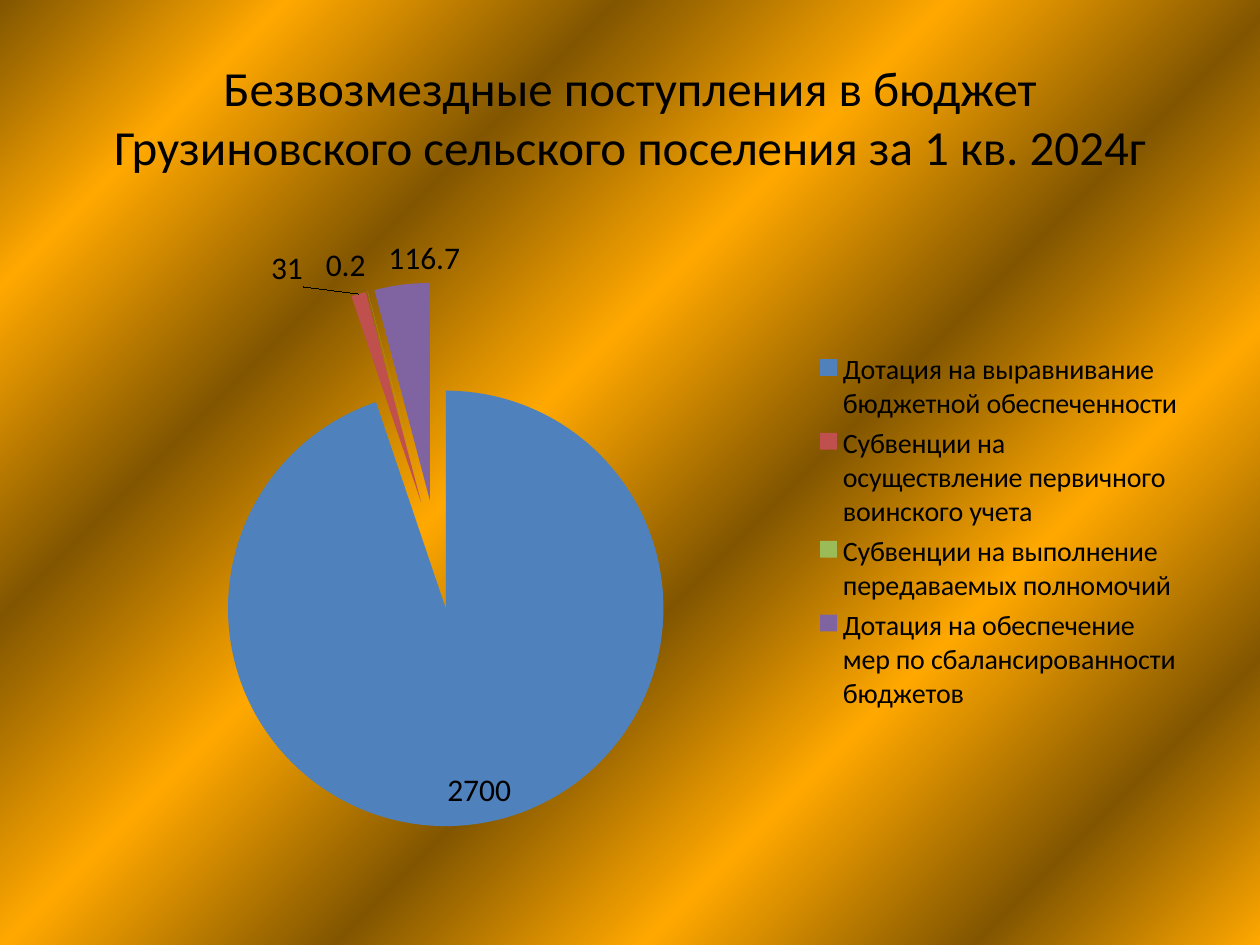
from lxml.etree import SubElement
from pptx import Presentation
from pptx.chart.data import CategoryChartData
from pptx.dml.color import RGBColor
from pptx.enum.chart import XL_CHART_TYPE as ChartType
from pptx.enum.chart import XL_LABEL_POSITION as LabelPosition
from pptx.enum.chart import XL_LEGEND_POSITION as LegendPosition
from pptx.enum.text import MSO_ANCHOR, PP_ALIGN
from pptx.oxml import parse_xml
from pptx.oxml.ns import nsdecls, qn
from pptx.util import Cm, Pt

FONT = "Calibri"
COLORS = {
    "text": "000000",
    "dark": "825600",
    "gold": "FFA800",
    "equalization": "4F81BD",
    "military": "C0504D",
    "delegated": "9BBB59",
    "balance": "8064A2",
}
GRADIENT_POSITIONS = [0, 13, 28, 43, 58, 72, 87, 100]
RECEIPTS = [
    ("Дотация на выравнивание бюджетной обеспеченности", 2700, "equalization"),
    ("Субвенции на осуществление первичного воинского учета", 31, "military"),
    ("Субвенции на выполнение передаваемых полномочий", 0.2, "delegated"),
    ("Дотация на обеспечение мер по сбалансированности бюджетов", 116.7, "balance"),
]


def color(name):
    return RGBColor.from_string(COLORS[name])


def style_font(font, size):
    font.name = FONT
    font.size = Pt(size)
    font.color.rgb = color("text")


def fill_background(slide):
    fill = slide.background.fill
    fill.gradient()
    stops = "".join(
        f'<a:gs pos="{position * 1000}"><a:srgbClr val="{COLORS[("dark", "gold")[index % 2]]}"/></a:gs>'
        for index, position in enumerate(GRADIENT_POSITIONS)
    )
    gradient = slide.element.find(".//" + qn("a:gradFill"))
    gradient.replace(
        gradient.find(qn("a:gsLst")),
        parse_xml(f'<a:gsLst {nsdecls("a")}>{stops}</a:gsLst>'),
    )
    gradient.find(qn("a:lin")).set("ang", str(45 * 60000))


def add_title(slide, left, top, width, height):
    shape = slide.shapes.add_textbox(left, top, width, height)
    frame = shape.text_frame
    frame.word_wrap = True
    frame.vertical_anchor = MSO_ANCHOR.MIDDLE
    frame.text = "Безвозмездные поступления в бюджет Грузиновского сельского поселения за 1 кв. 2024г"
    paragraph = frame.paragraphs[0]
    paragraph.alignment = PP_ALIGN.CENTER
    style_font(paragraph.runs[0].font, 28)


def add_receipts_chart(slide, left, top, width, height):
    data = CategoryChartData()
    data.categories = [name for name, _, _ in RECEIPTS]
    data.add_series("Series 1", [value for _, value, _ in RECEIPTS])
    chart = slide.shapes.add_chart(ChartType.PIE, left, top, width, height, data).chart
    chart.has_title = False
    style_font(chart.font, 18)

    chart.has_legend = True
    chart.legend.position = LegendPosition.RIGHT
    chart.legend.include_in_layout = False
    style_font(chart.legend.font, 16)

    plot = chart.plots[0]
    plot.vary_by_categories = True
    series = plot.series[0]
    for index, (_, _, name) in enumerate(RECEIPTS):
        fill = series.points[index].format.fill
        fill.solid()
        fill.fore_color.rgb = color(name)
    explosion = SubElement(series._element, qn("c:explosion"), val="25")
    series._element.find(qn("c:dPt")).addprevious(explosion)

    labels = series.data_labels
    labels.show_value = True
    labels.position = LabelPosition.BEST_FIT
    style_font(labels.font, 18)
    labels._element.find(qn("c:showLeaderLines")).set("val", "1")


def main():
    presentation = Presentation()
    presentation.slide_width = Cm(25.4)
    presentation.slide_height = Cm(19.05)
    slide = presentation.slides.add_slide(presentation.slide_layouts[6])
    fill_background(slide)
    add_title(slide, Cm(1.27), Cm(0.76), Cm(22.86), Cm(3.18))
    add_receipts_chart(slide, Cm(1.27), Cm(4.45), Cm(22.86), Cm(12.57))
    presentation.save("out.pptx")


if __name__ == "__main__":
    main()
